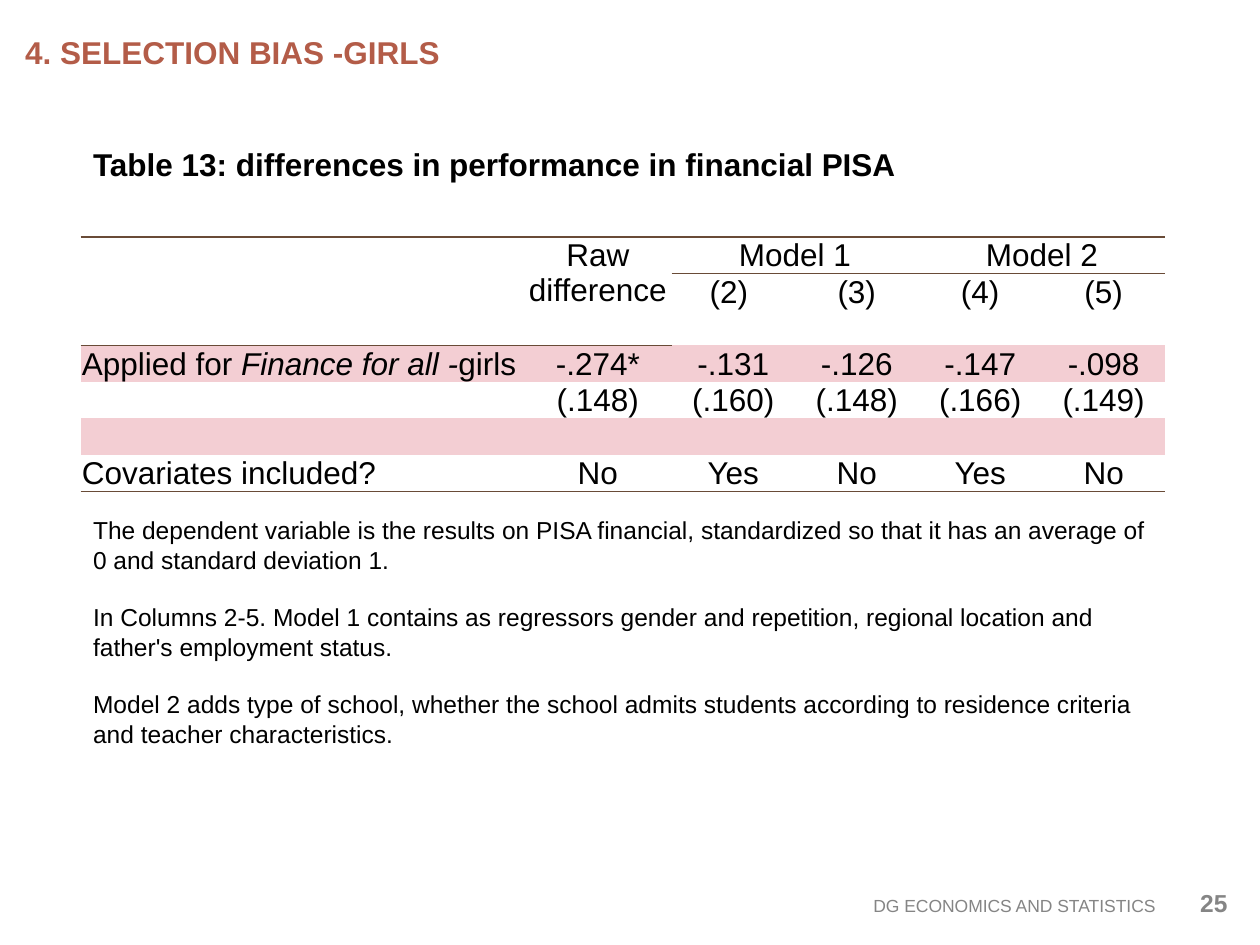
from dataclasses import dataclass

import lxml.etree
import pptx
import pptx.dml.color
import pptx.enum.text
import pptx.oxml.ns
import pptx.util

Inches = pptx.util.Inches
Pt = pptx.util.Pt
ALIGN = pptx.enum.text.PP_ALIGN
ANCHOR = pptx.enum.text.MSO_ANCHOR
FIT = pptx.enum.text.MSO_AUTO_SIZE

HUES = {
    "title": "B35C48",
    "text": "000000",
    "foot": "858585",
    "line": "694B37",
    "band": "F3CED3",
    "plain": "FFFFFF",
}
NO_GRID = "{2D5ABB26-0587-4C30-8999-92F81FD0307C}"

COLS = [3.52, 1.17] + [0.98] * 4
ROWS = [0.29, 0.57] + [0.29] * 4
CELLS = [
    ["", "Raw difference", "Model 1", "", "Model 2", ""],
    ["", "", "(2)\u00a0".replace("\u00a0", " "), "(3)", "(4)", "(5)"],
    ["Applied for |Finance for all -|girls", "-.274*", "-.131", "-.126", "-.147", "-.098"],
    ["", "(.148)", "(.160)", "(.148)", "(.166)", "(.149)"],
    [""] * 6,
    ["Covariates included?", "No", "Yes", "No", "Yes", "No"],
]
MERGES = [((0, 0), (1, 0)), ((0, 1), (1, 1)), ((0, 2), (0, 3)), ((0, 4), (0, 5))]
FILLS = ["plain", "plain", "band", None, "band", None]


@dataclass
class Box:
    left: float
    top: float
    width: float
    height: float
    texts: list[str]
    size: int
    hue: str = "text"
    bold: bool = False
    align: ALIGN = ALIGN.LEFT
    anchor: ANCHOR = ANCHOR.TOP
    right: float = 0.1


BOXES = [
    Box(3.14, 7.05, 6.03, 0.27, ["DG ECONOMICS AND STATISTICS"], 10, "foot",
        align=ALIGN.RIGHT, anchor=ANCHOR.MIDDLE, right=0),
    Box(9.27, 7, 0.57, 0.35, ["25"], 14, "foot", True, ALIGN.RIGHT),
    Box(0.64, 1.1, 8.59, 0.4,
        ["Table 13: differences in performance in financial PISA"], 18, bold=True),
    Box(0.64, 4.04, 8.59, 1.99, [
        "The dependent variable is the results on PISA financial, standardized "
        "so that it has an average of 0 and standard deviation 1.",
        "In Columns 2-5. Model 1 contains as regressors gender and repetition, "
        "regional location and father's employment status.",
        "Model 2 adds type of school, whether the school admits students "
        "according to residence criteria and teacher characteristics.",
    ], 14),
]


def color(hue: str) -> pptx.dml.color.RGBColor:
    return pptx.dml.color.RGBColor.from_string(HUES[hue])


def style(font, size: int, hue: str, bold: bool = False) -> None:
    font.name = "Arial"
    font.size = Pt(size)
    font.bold = bold
    font.color.rgb = color(hue)


def add_run(para, text: str, size: int, hue: str, bold: bool = False):
    run = para.add_run()
    run.text = text
    style(run.font, size, hue, bold)
    return run


def add_title(slide) -> None:
    title = slide.shapes.title
    title.left, title.top = Inches(0.1), Inches(-0.01)
    title.width, title.height = Inches(6.69), Inches(0.84)
    frame = title.text_frame
    frame.auto_size = FIT.NONE
    frame.vertical_anchor = ANCHOR.MIDDLE
    para = frame.paragraphs[0]
    para.alignment = ALIGN.LEFT
    props = para._p.get_or_add_pPr()
    props.set("marL", str(Inches(0.38)))
    props.set("indent", str(Inches(-0.38)))
    add_run(para, "4. SELECTION BIAS -GIRLS", 18, "title", True)


def add_box(slide, box: Box) -> None:
    shape = slide.shapes.add_textbox(
        Inches(box.left), Inches(box.top), Inches(box.width), Inches(box.height))
    frame = shape.text_frame
    frame.word_wrap = True
    frame.vertical_anchor = box.anchor
    frame.margin_right = Inches(box.right)
    for i, text in enumerate(box.texts):
        para = frame.add_paragraph() if i else frame.paragraphs[0]
        para.alignment = box.align
        if i:
            para.space_before = Pt(box.size * 1.15)
        add_run(para, text, box.size, box.hue, box.bold)


def add_edge(cell, side: str) -> None:
    """Draw the cell border named by side, T or B."""
    qn = pptx.oxml.ns.qn
    props = cell._tc.get_or_add_tcPr()
    line = lxml.etree.SubElement(props, qn(f"a:ln{side}"), w=str(Pt(1)))
    fill = lxml.etree.SubElement(line, qn("a:solidFill"))
    lxml.etree.SubElement(fill, qn("a:srgbClr"), val=HUES["line"])


def edges(row: int, col: int) -> str:
    if row == 0:
        return "TB"
    return "B" if row == len(ROWS) - 1 or (row == 1 and col < 2) else ""


def fill_cell(cell, row: int, col: int) -> None:
    cell.margin_left = cell.margin_right = cell.margin_top = Inches(0.01)
    cell.margin_bottom = 0
    para = cell.text_frame.paragraphs[0]
    para.alignment = ALIGN.CENTER if col else ALIGN.LEFT
    text = CELLS[row][col]
    if text:
        for i, part in enumerate(text.split("|")):
            add_run(para, part, 18, "text").font.italic = i % 2 == 1
    else:
        style(para.font, 18, "text")
    for side in edges(row, col):
        add_edge(cell, side)
    if FILLS[row]:
        cell.fill.solid()
        cell.fill.fore_color.rgb = color(FILLS[row])
    else:
        cell.fill.background()


def add_grid(slide) -> None:
    table = slide.shapes.add_table(
        len(ROWS), len(COLS), Inches(0.64), Inches(1.88),
        Inches(sum(COLS)), Inches(sum(ROWS))).table
    table.first_row = table.horz_banding = False
    table._tbl.tblPr.find(pptx.oxml.ns.qn("a:tableStyleId")).text = NO_GRID
    for col, width in zip(table.columns, COLS):
        col.width = Inches(width)
    for row, height in zip(table.rows, ROWS):
        row.height = Inches(height)
    for r in range(len(ROWS)):
        for c in range(len(COLS)):
            fill_cell(table.cell(r, c), r, c)
    for first, last in MERGES:
        table.cell(*first).merge(table.cell(*last))


def main() -> None:
    deck = pptx.Presentation()
    deck.slide_width, deck.slide_height = Inches(10), Inches(7.5)
    slide = deck.slides.add_slide(deck.slide_layouts[5])
    add_title(slide)
    add_grid(slide)
    for box in BOXES:
        add_box(slide, box)
    deck.save("out.pptx")


if __name__ == "__main__":
    main()
